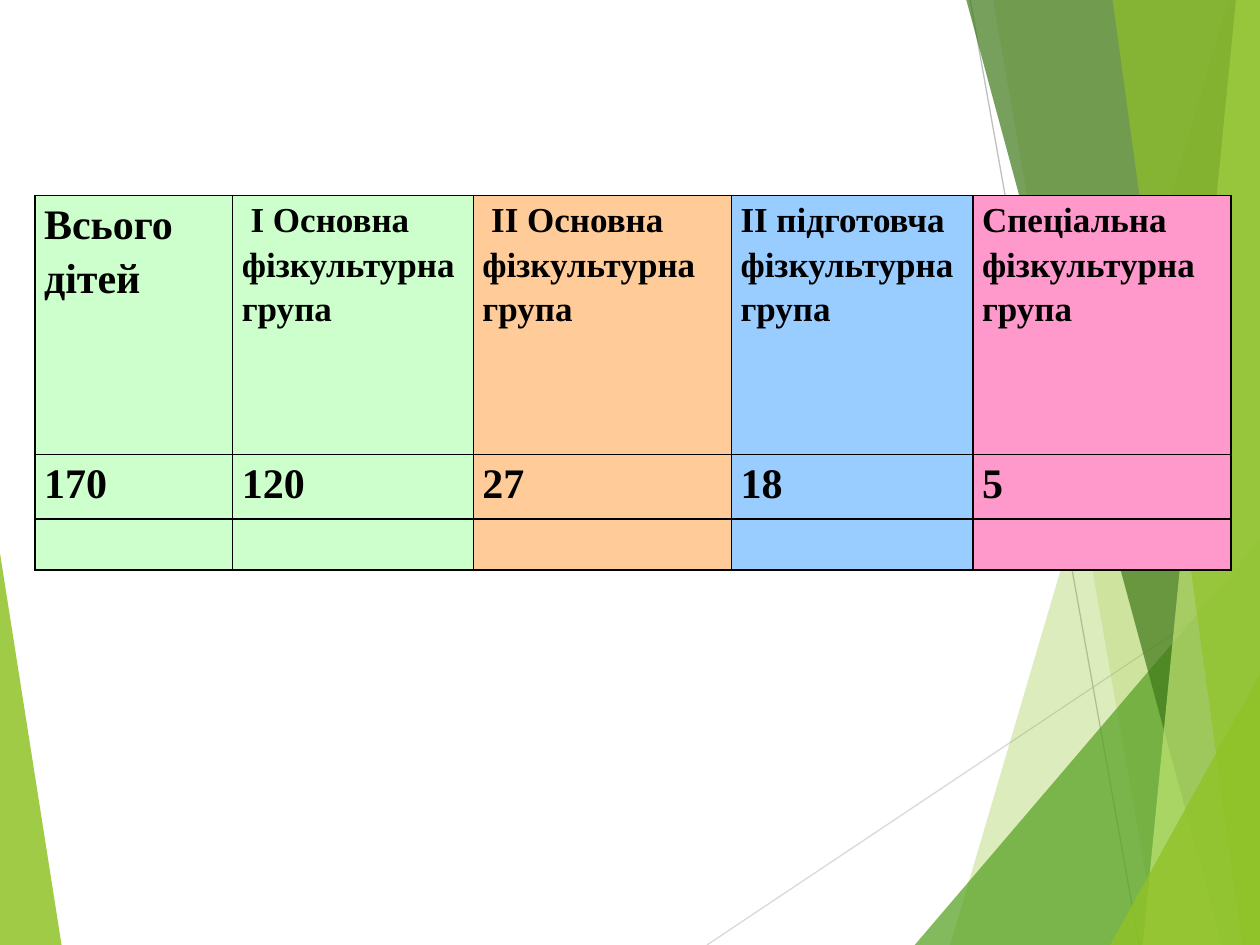
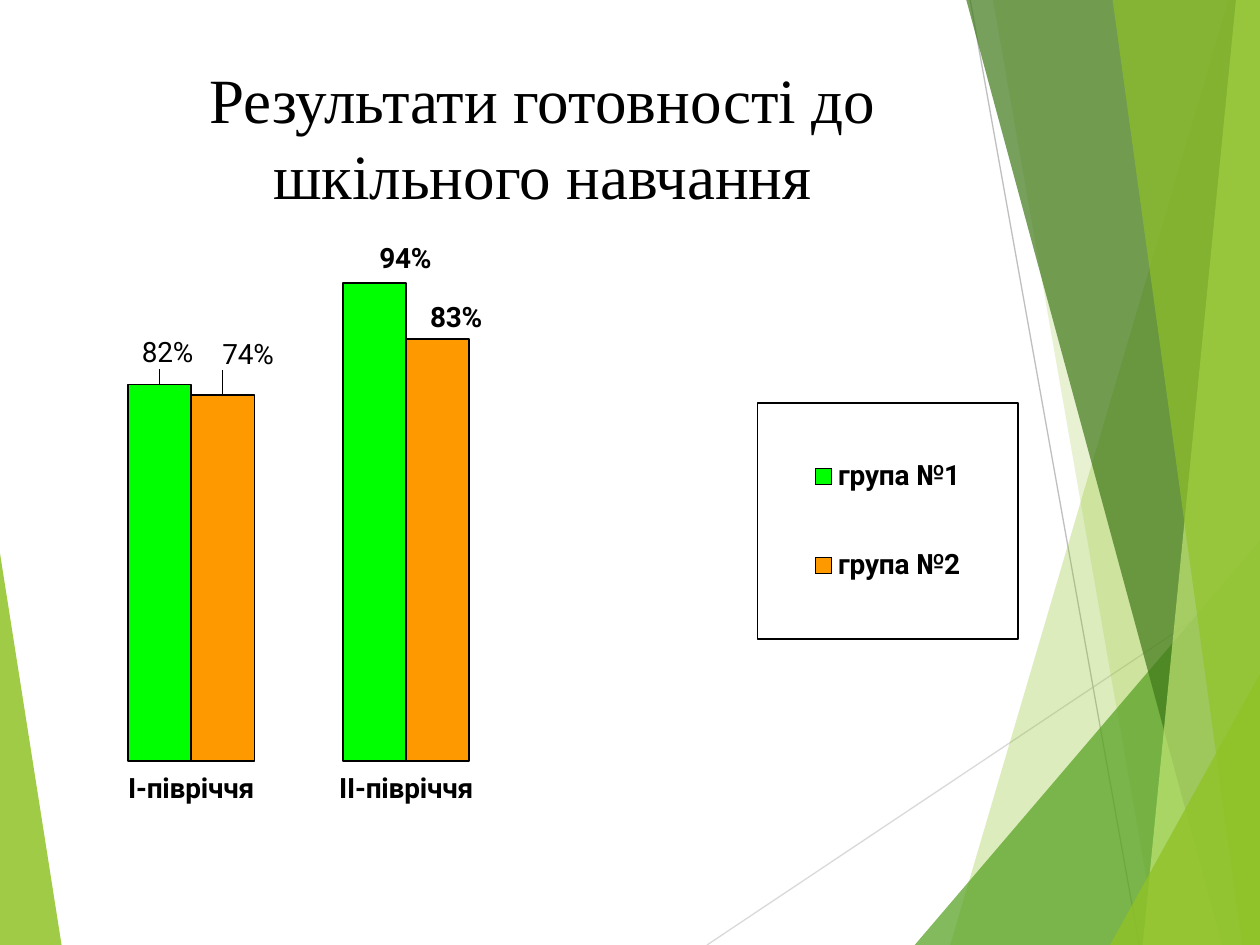
"""Build two slides on children's health groups and school readiness."""
from lxml.etree import SubElement
from pptx import Presentation
from pptx.chart.data import CategoryChartData
from pptx.dml.color import RGBColor
from pptx.enum.chart import XL_CHART_TYPE as ChartType, XL_LEGEND_POSITION as LegendPosition
from pptx.enum.chart import XL_TICK_MARK as TickMark
from pptx.enum.shapes import MSO_CONNECTOR as Connector
from pptx.enum.text import MSO_ANCHOR as Anchor, PP_ALIGN as Align
from pptx.oxml import parse_xml
from pptx.oxml.ns import nsdecls, qn
from pptx.util import Pt

WIDTH, HEIGHT = 720, 540
COLORS = {
    "black": "000000", "lime": "90C226", "green": "54A021", "forest": "3F7819",
    "pale lime": "C0E474", "light gray": "D9D9D9", "gray": "BFBFBF",
    "mint": "CCFFCC", "peach": "FFCC99", "sky": "99CCFF", "pink": "FF99CC",
    "bright green": "00FF00", "orange": "FF9900",
}
RAYS = [(404, 540, 720, 329, "light gray"), (554.4, 0, 651, 540, "gray")]
FACETS = [
    (0, 0, 316, 35.2, "lime", 85),
    (WIDTH, 702, 0, 543, "lime", 30),
    (WIDTH, 567.4, 0, 661.7, "lime", 20),
    (WIDTH, WIDTH, 309, 522.7, "green", 72),
    (WIDTH, 552.2, 0, 698.4, "forest", 70),
    (WIDTH, 706.3, 0, 653, "pale lime", 70),
    (WIDTH, 635.8, 0, 710, "lime", 65),
    (WIDTH, WIDTH, 385.2, 634.3, "lime", 80),
]
GROUPS = [
    (113, "mint", ["Всього дітей"], 24, "170"),
    (137.5, "mint", [" І Основна", "фізкультурна", "група"], 20, "120"),
    (147.5, "peach", [" ІІ Основна", "фізкультурна", "група"], 20, "27"),
    (138, "sky", ["ІІ підготовча", "фізкультурна", "група"], 20, "18"),
    (147.5, "pink", ["Спеціальна", "фізкультурна", "група"], 20, "5"),
]
HALF_YEARS = ["І-півріччя", "ІІ-півріччя", "", ""]
READINESS = [
    ("група №1", "bright green", [0.74, 0.94, None, None], "82%"),
    ("група №2", "orange", [0.72, 0.83, None, None], "74%"),
]
LABEL_SHIFTS = [(0.007, -0.016), (0.027, -0.005), (0.022, -0.03), (0.016, 0)]


def rgb(color):
    """Return the named colour."""
    return RGBColor.from_string(COLORS[color])


def set_layout(element, index, modes=(), **sizes):
    """Give a chart element a manual layout."""
    for layout in element.findall(qn("c:layout")):
        element.remove(layout)
    layout = parse_xml(f"<c:layout {nsdecls('c')}><c:manualLayout/></c:layout>")
    for tag, value in [*modes, *sizes.items()]:
        SubElement(layout[0], qn(f"c:{tag}")).set("val", str(value))
    element.insert(index, layout)


def set_frame(element, content):
    """Put shape properties before the text properties of a chart element."""
    frame = parse_xml(f"<c:spPr {nsdecls('c', 'a')}>{content}</c:spPr>")
    element.find(qn("c:txPr")).addprevious(frame)


class Deck:
    """Hold the shared style and the current slide."""

    serif = "Times New Roman"
    sans = "Roboto"

    def __init__(self):
        """Start an empty presentation."""
        self.presentation = Presentation()
        self.presentation.slide_width = Pt(WIDTH)
        self.presentation.slide_height = Pt(HEIGHT)
        self.slide = None

    def add_slide(self):
        """Add a slide with the shared background."""
        self.slide = self.presentation.slides.add_slide(self.presentation.slide_layouts[6])
        for ray in RAYS:
            self.add_ray(*ray)
        for facet in FACETS:
            self.add_facet(*facet)

    def add_ray(self, x1, y1, x2, y2, color):
        """Draw a thin background line."""
        line = self.slide.shapes.add_connector(Connector.STRAIGHT, Pt(x1), Pt(y1), Pt(x2), Pt(y2))
        line.line.color.rgb = rgb(color)
        line.line.width = Pt(0.75)
        SubElement(line.element.spPr, qn("a:effectLst"))

    def add_facet(self, edge, top_x, top_y, bottom_x, color, opacity):
        """Draw a translucent facet standing on the bottom of the slide."""
        builder = self.slide.shapes.build_freeform(Pt(top_x), Pt(top_y))
        corners = [(bottom_x, HEIGHT), (edge, HEIGHT), (edge, top_y)]
        builder.add_line_segments([(Pt(x), Pt(y)) for x, y in corners], close=True)
        shape = builder.convert_to_shape()
        shape.shadow.inherit = False
        shape.line.fill.background()
        shape.fill.solid()
        shape.fill.fore_color.rgb = rgb(color)
        fill_color = shape.element.spPr.find(qn("a:solidFill"))[0]
        SubElement(fill_color, qn("a:alpha")).set("val", str(opacity * 1000))

    def set_font(self, font, name, size, bold, color="black"):
        """Apply one font style."""
        font.name, font.size, font.bold = name, Pt(size), bold
        font.color.rgb = rgb(color)

    def add_title(self, text, left, top, width, height):
        """Add a centred title."""
        frame = self.slide.shapes.add_textbox(Pt(left), Pt(top), Pt(width), Pt(height)).text_frame
        frame.word_wrap = True
        frame.vertical_anchor = Anchor.MIDDLE
        paragraph = frame.paragraphs[0]
        paragraph.text = text
        paragraph.alignment = Align.CENTER
        self.set_font(paragraph.font, self.serif, 36, False)

    def fill_cell(self, cell, lines, size, color):
        """Fill, border and write one table cell."""
        cell.margin_left = cell.margin_right = Pt(5.2)
        cell.margin_top = cell.margin_bottom = 0
        for side in ("lnL", "lnR", "lnT", "lnB"):
            border = SubElement(cell._tc.get_or_add_tcPr(), qn(f"a:{side}"), w=str(Pt(1)))
            fill = SubElement(border, qn("a:solidFill"))
            SubElement(fill, qn("a:srgbClr"), val=COLORS["black"])
        cell.fill.solid()
        cell.fill.fore_color.rgb = rgb(color)
        cell.text = "\n".join(lines)
        for paragraph in cell.text_frame.paragraphs:
            paragraph.alignment = Align.JUSTIFY
            paragraph.line_spacing = 1.15
            self.set_font(paragraph.font, self.serif, size, True)

    def add_group_table(self, left, top, row_heights):
        """Add the table of children by physical education group."""
        width = sum(group[0] for group in GROUPS)
        table = self.slide.shapes.add_table(
            len(row_heights), len(GROUPS), Pt(left), Pt(top), Pt(width), Pt(sum(row_heights))).table
        for row, height in zip(table.rows, row_heights):
            row.height = Pt(height)
        for index, (width, color, heading, size, count) in enumerate(GROUPS):
            table.columns[index].width = Pt(width)
            self.fill_cell(table.cell(0, index), heading, size, color)
            self.fill_cell(table.cell(1, index), [count], 24, color)
            self.fill_cell(table.cell(2, index), [], 18, color)

    def add_readiness_chart(self, left, top, width, height):
        """Add the column chart of school readiness."""
        data = CategoryChartData(number_format="0%")
        data.categories = HALF_YEARS
        for name, _, values, _ in READINESS:
            data.add_series(name, values)
        chart = self.slide.shapes.add_chart(
            ChartType.COLUMN_CLUSTERED, Pt(left), Pt(top), Pt(width), Pt(height), data).chart
        chart.has_title = False
        self.set_font(chart.font, self.sans, 16, True)
        set_frame(chart.element, "<a:noFill/><a:ln><a:noFill/></a:ln>")
        self.style_axes(chart)
        plot = chart.plots[0]
        plot.gap_width, plot.overlap, plot.vary_by_categories = 140, 0, False
        for series, (_, color, _, first_label) in zip(plot.series, READINESS):
            self.style_series(series, color, first_label)
        for label, (x, y) in zip(chart.element.iter(qn("c:dLbl")), LABEL_SHIFTS):
            set_layout(label, 1, x=x, y=y)
        edges = [("xMode", "edge"), ("yMode", "edge")]
        set_layout(chart.element.find(f".//{qn('c:plotArea')}"), 0,
                   [("layoutTarget", "inner"), *edges], x=0.018, y=0.089, w=0.749, h=0.793)
        self.style_legend(chart, edges)

    def style_axes(self, chart):
        """Hide the value axis and the category line."""
        values, categories = chart.value_axis, chart.category_axis
        values.minimum_scale, values.maximum_scale = 0, 1
        values.has_major_gridlines = False
        values.visible = False
        categories.major_tick_mark = TickMark.OUTSIDE
        categories.format.line.fill.background()
        self.set_font(categories.tick_labels.font, self.sans, 16, True)

    def style_series(self, series, color, first_label):
        """Colour a series and label its columns."""
        series.format.fill.solid()
        series.format.fill.fore_color.rgb = rgb(color)
        series.format.line.color.rgb = rgb("black")
        series.format.line.width = Pt(1)
        labels = series.data_labels
        labels.show_value = True
        labels.number_format, labels.number_format_is_linked = "0%", False
        self.set_font(labels.font, self.sans, 16, True)
        run = series.points[0].data_label.text_frame.paragraphs[0].add_run()
        run.text = first_label
        self.set_font(run.font, self.sans, 16, False)
        self.set_font(series.points[1].data_label.font, self.sans, 16, True)

    def style_legend(self, chart, edges):
        """Place and frame the legend."""
        chart.has_legend = True
        legend = chart.legend
        legend.position = LegendPosition.RIGHT
        legend.include_in_layout = False
        self.set_font(legend.font, self.sans, 16, True)
        element = chart.element.find(f".//{qn('c:legend')}")
        set_layout(element, 1, edges, x=0.605, y=0.324, w=0.227, h=0.368)
        black = f'<a:solidFill><a:srgbClr val="{COLORS["black"]}"/></a:solidFill>'
        set_frame(element, f'<a:noFill/><a:ln w="{Pt(0.75)}">{black}</a:ln>')


def main():
    """Build and save the slides."""
    deck = Deck()
    deck.add_slide()
    deck.add_group_table(20, 111.6, [148, 37, 29])
    deck.add_slide()
    deck.add_title("Результати готовності до шкільного навчання", 60, 26, 500, 103.5)
    deck.add_readiness_chart(36, 111.6, 656, 366.5)
    deck.presentation.save("out.pptx")


if __name__ == "__main__":
    main()
